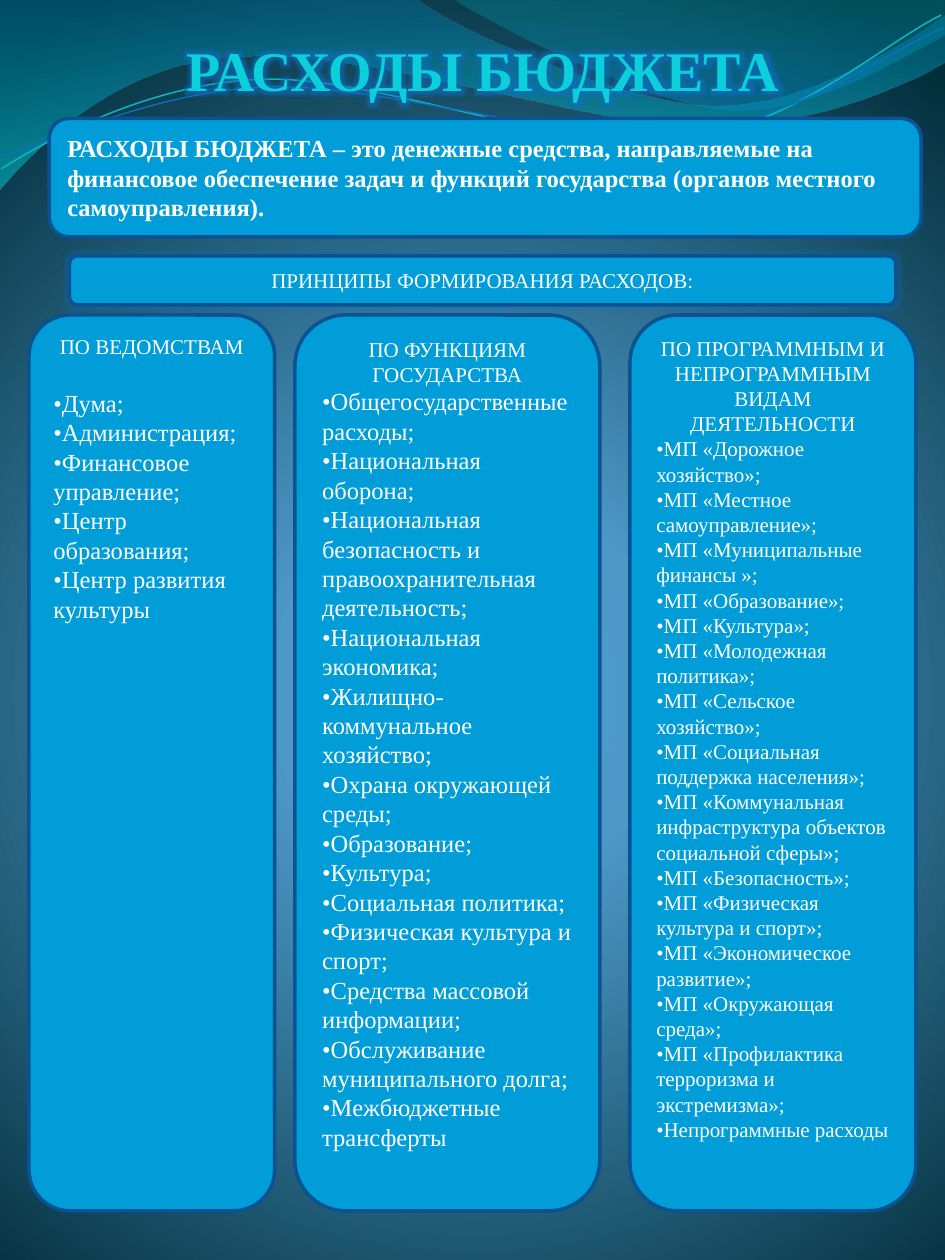
from dataclasses import dataclass
from typing import Optional

from lxml.etree import Element, SubElement
from pptx import Presentation
from pptx.dml.color import RGBColor
from pptx.enum.shapes import MSO_SHAPE as Shape
from pptx.enum.text import MSO_ANCHOR as Anchor, PP_ALIGN as Align
from pptx.oxml import parse_xml
from pptx.oxml.ns import nsdecls, qn
from pptx.util import Inches, Pt

# The slide is a grid of 750 columns by 1000 rows
WIDTH, HEIGHT = Inches(7.5), Inches(10)
COLUMN, ROW = WIDTH // 750, HEIGHT // 1000

FONT = "Times New Roman"
WHITE = RGBColor(0xFF, 0xFF, 0xFF)
PANEL = RGBColor(0x00, 0x9D, 0xD9)
BORDER = RGBColor(0x0B, 0x52, 0x92)
TITLE = RGBColor(0x0B, 0xD0, 0xD9)
TEAL = RGBColor(0x0A, 0xB8, 0xBF)
BLUE = RGBColor(0x0F, 0x6F, 0xC6)

CENTRED_PATH = ('<a:path path="circle"><a:fillToRect l="10000" t="110000" '
                'r="10000" b="100000"/></a:path>')
DOWNWARD = '<a:lin ang="5400000" scaled="1"/>'


@dataclass
class Wave:
    """Knots in grid units: a pair is a line, a sextuple a Bezier curve."""
    start: tuple
    knots: list
    stops: Optional[list] = None  # (position, colour, opacity)
    line: Optional[RGBColor] = None
    weight: float = 0


@dataclass
class Column:
    left: int
    width: int
    heading: str
    items: list
    size: int = 14
    gap: float = 0


WAVES = [
    Wave((0, -1), [(330, -1), (357, 22, 498, 84, 569, 84), (640, 84, 719, 34, 750, 12),
                   (751, 48), (738, 58, 652, 101, 559, 101), (466, 100, 286, 37, 193, 45),
                   (97, 47, 34, 111, -1, 151), (0, -1)],
         stops=[(0, "0074A1", 45), (100, "00C6CF", 55)]),
    Wave((359, -1), [(382, 15, 511, 82, 577, 87), (642, 92, 721, 43, 750, 28),
                     (750, 0), (359, -1)],
         stops=[(0, "00A1A9", 30), (80, "008BBF", 45)]),
    Wave((1, 134), [(36, 112, 118, 66, 207, 63), (296, 59, 445, 121, 535, 112),
                    (626, 104, 703, 33, 747, 12)], line=TEAL, weight=0.85),
    Wave((1, 124), [(36, 115, 122, 72, 212, 69), (302, 66, 449, 114, 538, 106),
                    (628, 99, 705, 40, 749, 22)], line=BLUE, weight=0.75),
]

COLUMNS = [
    Column(23, 195, "ПО ВЕДОМСТВАМ", [
        "Дума;", "Администрация;", "Финансовое управление;",
        "Центр образования;", "Центр развития культуры"], gap=16.8),
    Column(234, 242, "ПО ФУНКЦИЯМ ГОСУДАРСТВА", [
        "Общегосударственные расходы;", "Национальная оборона;",
        "Национальная безопасность и правоохранительная деятельность;",
        "Национальная экономика;", "Жилищно-коммунальное хозяйство;",
        "Охрана окружающей среды;", "Образование;", "Культура;",
        "Социальная политика;", "Физическая культура и спорт;",
        "Средства массовой информации;", "Обслуживание муниципального долга;",
        "Межбюджетные трансферты"]),
    Column(500, 227, "ПО ПРОГРАММНЫМ И НЕПРОГРАММНЫМ ВИДАМ ДЕЯТЕЛЬНОСТИ", [
        "МП «Дорожное хозяйство»;", "МП «Местное самоуправление»;",
        "МП «Муниципальные финансы »;", "МП «Образование»;", "МП «Культура»;",
        "МП «Молодежная политика»;", "МП «Сельское хозяйство»;",
        "МП «Социальная поддержка населения»;",
        "МП «Коммунальная инфраструктура объектов социальной сферы»;",
        "МП «Безопасность»;", "МП «Физическая культура и спорт»;",
        "МП «Экономическое развитие»;", "МП «Окружающая среда»;",
        "МП «Профилактика терроризма и экстремизма»;",
        "Непрограммные расходы"], size=12),
]


def gradient(stops: list, direction: str):
    marks = "".join(
        f'<a:gs pos="{position * 1000}"><a:srgbClr val="{colour}">'
        f'<a:alpha val="{opacity * 1000}"/></a:srgbClr></a:gs>'
        for position, colour, opacity in stops)
    return parse_xml(f'<a:gradFill {nsdecls("a")} rotWithShape="1">'
                     f'<a:gsLst>{marks}</a:gsLst>{direction}</a:gradFill>')


def replace_fill(parent, fill) -> None:
    parent.replace(parent.find(qn("a:solidFill")), fill)


def add_glow(effects, radius: float, opacity: int) -> None:
    glow = SubElement(effects, qn("a:glow"), rad=str(Pt(radius)))
    colour = SubElement(glow, qn("a:srgbClr"), val=str(BLUE))
    SubElement(colour, qn("a:alpha"), val=str(opacity * 1000))


def bend(shape, knots: list) -> None:
    """Turn the straight segments that have control points into Bezier curves."""
    segments = list(shape._element.iter(qn("a:lnTo")))
    for segment, knot in zip(segments, knots):
        if len(knot) == 2:
            continue
        curve = Element(qn("a:cubicBezTo"))
        for x, y in zip(knot[::2], knot[1::2]):
            SubElement(curve, qn("a:pt"), x=str(x * COLUMN - shape.left),
                       y=str(y * ROW - shape.top))
        segment.getparent().replace(segment, curve)


def draw_wave(page, wave: Wave) -> None:
    ends = [(knot[-2] * COLUMN, knot[-1] * ROW) for knot in wave.knots]
    builder = page.shapes.build_freeform(wave.start[0] * COLUMN, wave.start[1] * ROW)
    builder.add_line_segments(ends, close=wave.line is None)
    shape = builder.convert_to_shape()
    bend(shape, wave.knots)
    shape.shadow.inherit = False
    if wave.line is None:
        shape.fill.solid()
        replace_fill(shape.fill._xPr, gradient(wave.stops, DOWNWARD))
        shape.line.fill.background()
    else:
        shape.fill.background()
        shape.line.color.rgb = wave.line
        shape.line.width = Pt(wave.weight)


def draw_panel(page, left: int, top: int, width: int, height: int, anchor=Anchor.MIDDLE):
    box = page.shapes.add_shape(Shape.ROUNDED_RECTANGLE, left * COLUMN, top * ROW,
                                width * COLUMN, height * ROW)
    box.shadow.inherit = False
    box.fill.solid()
    box.fill.fore_color.rgb = PANEL
    box.line.color.rgb = BORDER
    box.line.width = Pt(2)
    box.text_frame.word_wrap = True
    box.text_frame.vertical_anchor = anchor
    return box


def write(para, text: str, size: int, colour=WHITE, bold=False, align=Align.LEFT):
    para.alignment = align
    span = para.add_run()
    span.text = text
    span.font.color.rgb = colour
    for name, value in {"name": FONT, "size": Pt(size), "bold": bold}.items():
        setattr(span.font, name, value)
    return span


def draw_column(page, column: Column) -> None:
    box = draw_panel(page, column.left, 250, column.width, 711, Anchor.TOP)
    heading = box.text_frame.paragraphs[0]
    write(heading, column.heading, 12, align=Align.CENTER)
    heading.space_after = Pt(column.gap)
    for item in column.items:
        write(box.text_frame.add_paragraph(), f"•{item}", column.size)


def main() -> None:
    deck = Presentation()
    deck.slide_width, deck.slide_height = WIDTH, HEIGHT
    page = deck.slides.add_slide(deck.slide_layouts[6])

    # Background and waves
    page.background.fill.solid()
    replace_fill(page.background.fill._xPr, gradient(
        [(0, "4AA0D6", 100), (25, "4C98C7", 100), (100, "002C38", 100)], CENTRED_PATH))
    for wave in WAVES:
        draw_wave(page, wave)

    # Definition
    definition = draw_panel(page, 39, 94, 692, 94)
    write(definition.text_frame.paragraphs[0],
          "РАСХОДЫ БЮДЖЕТА – это денежные средства, направляемые на финансовое обеспечение "
          "задач и функций государства (органов местного самоуправления).", 14, bold=True)

    # Title with glow
    title = page.shapes.add_textbox(62 * COLUMN, 23 * ROW, 643 * COLUMN, 64 * ROW)
    title.text_frame.word_wrap = True
    span = write(title.text_frame.paragraphs[0], "РАСХОДЫ БЮДЖЕТА", 32, TITLE, True, Align.CENTER)
    effects = parse_xml(f'<a:effectLst {nsdecls("a")}/>')
    add_glow(effects, 10, 60)
    span.font._element.find(qn("a:solidFill")).addnext(effects)

    # Principles and their columns
    first, *others = COLUMNS
    draw_column(page, first)
    principles = draw_panel(page, 55, 203, 656, 39)
    add_glow(principles._element.spPr.find(qn("a:effectLst")), 4, 25)
    write(principles.text_frame.paragraphs[0], "ПРИНЦИПЫ ФОРМИРОВАНИЯ РАСХОДОВ:", 12,
          align=Align.CENTER)
    for column in others:
        draw_column(page, column)

    deck.save("out.pptx")


if __name__ == "__main__":
    main()
